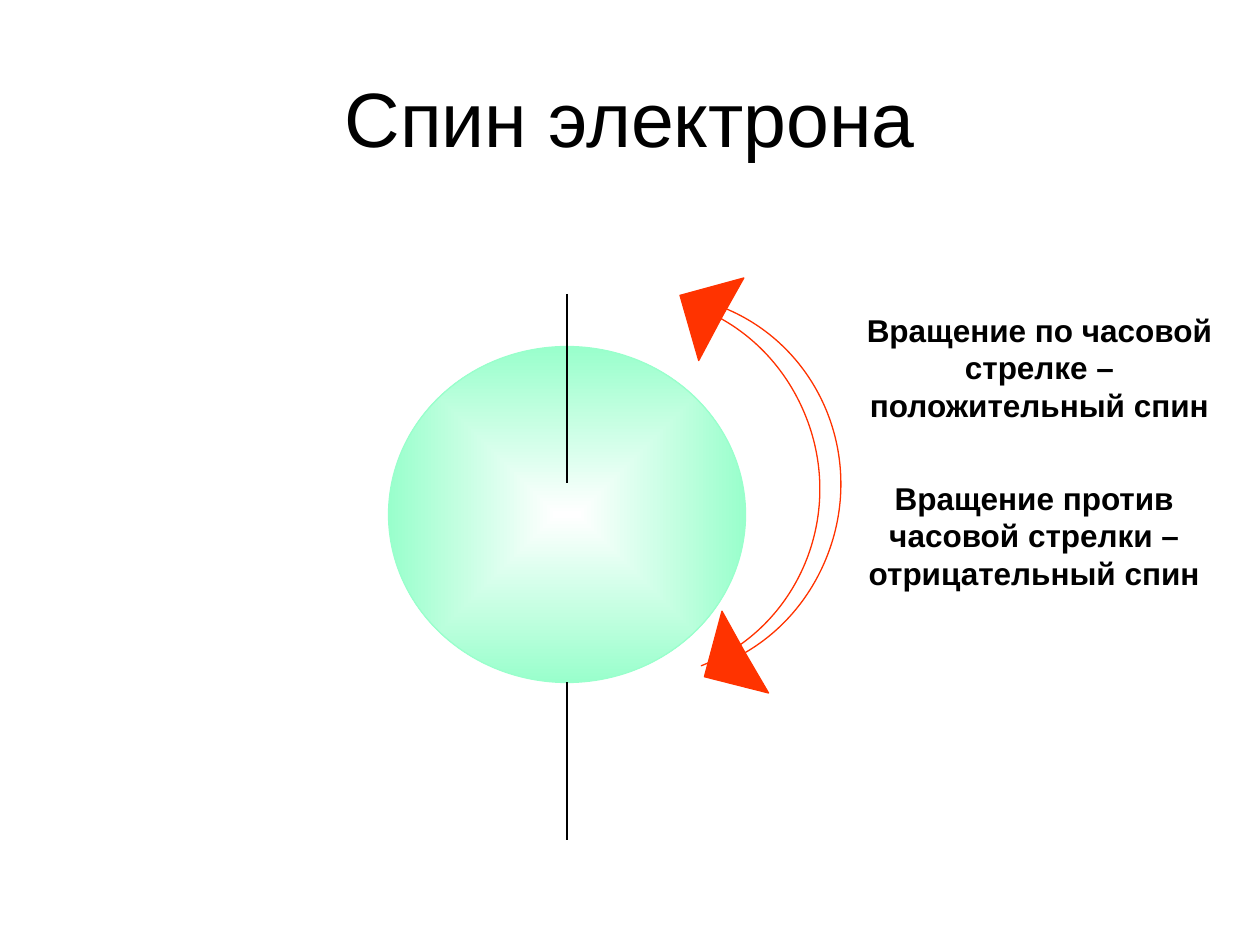
import dataclasses

import lxml.etree
import pptx
import pptx.dml.color
import pptx.enum.shapes
import pptx.enum.text
import pptx.oxml.ns
import pptx.util

Pt = pptx.util.Pt
qn = pptx.oxml.ns.qn


def color(code):
    return pptx.dml.color.RGBColor.from_string(code)


@dataclasses.dataclass(frozen=True)
class Theme:
    font: str = "Arial"
    title_size: int = 44
    label_size: int = 18
    text: str = "000000"
    core: str = "FFFFFF"
    sphere: str = "99FFCC"
    arrow: str = "FF3300"
    outline: float = 0.75
    axis: float = 1


THEME = Theme()


def add_text(page, box, text, size, bold=False, anchor="TOP"):
    frame = page.shapes.add_textbox(*map(Pt, box)).text_frame
    frame.word_wrap = True
    frame.vertical_anchor = getattr(pptx.enum.text.MSO_ANCHOR, anchor)
    frame.text = text
    para = frame.paragraphs[0]
    para.alignment = pptx.enum.text.PP_ALIGN.CENTER
    font = para.runs[0].font
    font.name, font.size, font.bold = THEME.font, Pt(size), bold
    font.color.rgb = color(THEME.text)


def add_sphere(page, box):
    sphere = page.shapes.add_shape(
        pptx.enum.shapes.MSO_SHAPE.OVAL, *map(Pt, box))
    sphere.shadow.inherit = False
    sphere.line.color.rgb = color(THEME.sphere)
    sphere.line.width = Pt(THEME.outline)
    sphere.fill.gradient()
    stops = zip(sphere.fill.gradient_stops, (0, 1), (THEME.core, THEME.sphere))
    for stop, position, code in stops:
        stop.position = position
        stop.color.rgb = color(code)
    gradient = sphere.element.spPr.find(qn("a:gradFill"))
    linear = gradient.find(qn("a:lin"))
    radial = lxml.etree.Element(qn("a:path"), path="shape")
    center = dict.fromkeys("ltrb", "50000")
    lxml.etree.SubElement(radial, qn("a:fillToRect"), center)
    gradient.replace(linear, radial)


def add_axis(page, box):
    left, top, height = box
    axis = page.shapes.add_connector(
        pptx.enum.shapes.MSO_CONNECTOR.STRAIGHT,
        Pt(left), Pt(top), Pt(left), Pt(top + height))
    axis.line.color.rgb = color(THEME.text)
    axis.line.width = Pt(THEME.axis)
    lxml.etree.SubElement(axis.element.spPr, qn("a:effectLst"))


def add_electron(page, box):
    left, top, width, height = box
    middle = left + width / 2
    add_sphere(page, box)
    add_axis(page, (middle, top - 30, 108))
    add_axis(page, (middle, top + height, 90))


def draw_outline(outline, commands):
    for child in list(outline):
        outline.remove(child)
    for command, points in commands:
        step = lxml.etree.SubElement(outline, qn("a:" + command))
        for x, y in points:
            lxml.etree.SubElement(
                step, qn("a:pt"), x=str(int(Pt(x))), y=str(int(Pt(y))))


def add_spin_arrow(page, box, rotation, mirrored=False):
    left, top, width, height = box
    right, bottom = left + width, top + height
    builder = page.shapes.build_freeform(Pt(left), Pt(top))
    builder.add_line_segments(
        [(Pt(right), Pt(top)), (Pt(right), Pt(bottom)),
         (Pt(left), Pt(bottom))], close=True)
    arrow = builder.convert_to_shape()
    arrow.rotation = rotation
    arrow.shadow.inherit = False
    arrow.fill.solid()
    arrow.fill.fore_color.rgb = color(THEME.arrow)
    arrow.line.color.rgb = color(THEME.arrow)
    arrow.line.width = Pt(THEME.outline)

    arc = [(180.3, 24.5), (160.4, 8.3), (135.7, 0), (width / 2, 0),
           (49.3, 0), (0, 48.4), (0, height / 2)]
    back = arc[::-1]
    head = [(197.1, 3.8), (201.3, 41.4), (162.7, 45.2), arc[0]]
    curves = [("cubicBezTo", side[start:start + 3])
              for side in (arc, back) for start in (1, 4)]
    edges = [("lnTo", [corner]) for corner in head]
    properties = arrow.element.spPr
    draw_outline(next(properties.iter(qn("a:path"))),
                 [("moveTo", arc[:1]), *curves, *edges, ("close", [])])
    if mirrored:
        properties.find(qn("a:xfrm")).set("flipH", "1")


def main():
    deck = pptx.Presentation()
    deck.slide_width, deck.slide_height = Pt(720), Pt(540)
    page = deck.slides.add_slide(deck.slide_layouts[6])
    add_text(page, (36, 21.6, 648, 90), "Спин электрона",
             THEME.title_size, anchor="MIDDLE")
    add_electron(page, (222, 198, 204, 192))
    add_spin_arrow(page, (262, 170, 220.4, 216), 110.6)
    add_text(page, (486, 174, 216, 72),
             "Вращение по часовой стрелке – положительный спин",
             THEME.label_size, bold=True)
    add_spin_arrow(page, (250, 170, 220.4, 216), 68.4, mirrored=True)
    add_text(page, (480, 270, 222, 72),
             "Вращение против часовой стрелки – отрицательный спин",
             THEME.label_size, bold=True)
    deck.save("out.pptx")


if __name__ == "__main__":
    main()
